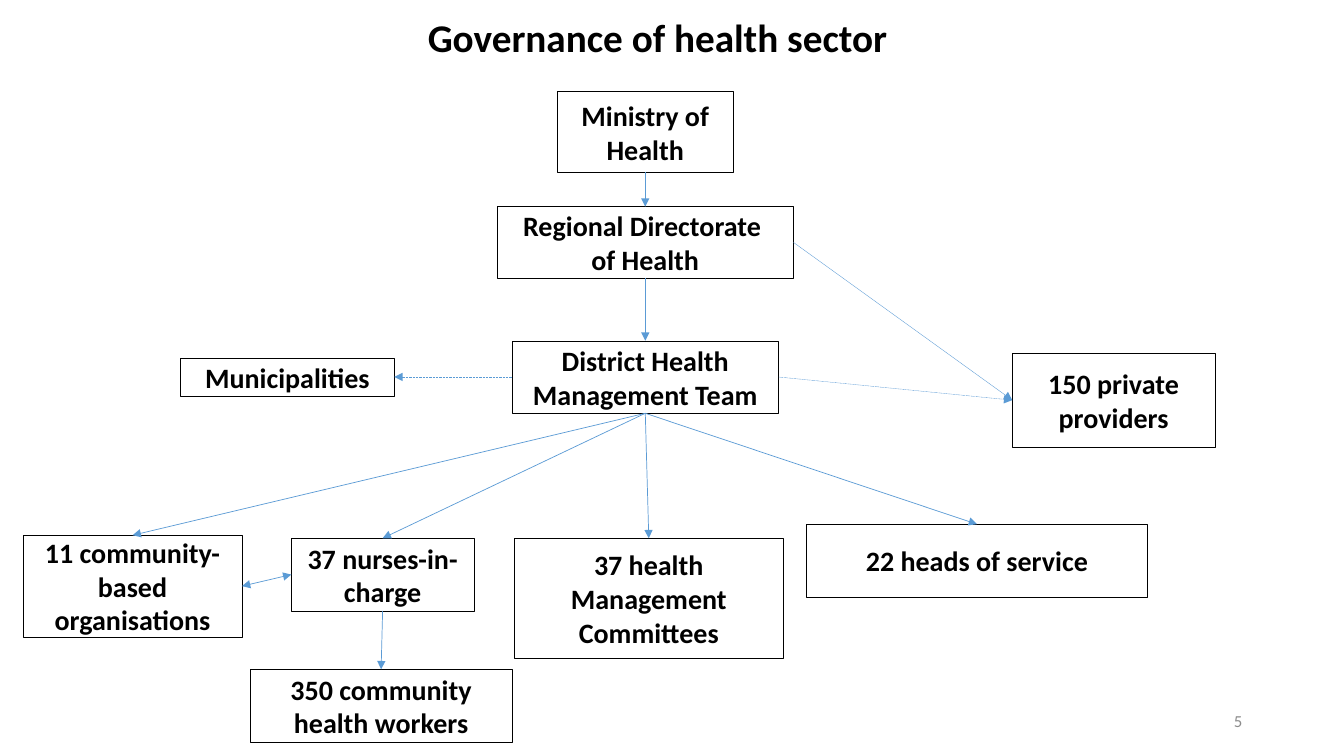
import pptx
import pptx.util
import pptx.dml.color
import pptx.enum.dml
import pptx.enum.shapes
import pptx.enum.text
import pptx.oxml.xmlchemy

Inches = pptx.util.Inches
Align = pptx.enum.text.PP_ALIGN
TOP, LEFT, BOTTOM, RIGHT = range(4)


def colour(value):
    return pptx.dml.color.RGBColor.from_string(value)


class Chart:
    """Draws the boxes, arrows and labels of an organisation chart on one page."""

    font = "Calibri"
    ink = "000000"
    paper = "FFFFFF"
    arrow_blue = "5B9BD5"
    muted = "8C8C8C"

    def __init__(self, page):
        self.page = page

    def set_text(self, shape, text, size, ink, bold=True, align=Align.CENTER, spacing=1.0):
        frame = shape.text_frame
        frame.word_wrap = True
        frame.vertical_anchor = pptx.enum.text.MSO_ANCHOR.MIDDLE
        para = frame.paragraphs[0]
        para.text = text
        para.alignment = align
        para.line_spacing = spacing
        para.font.name = self.font
        para.font.size = pptx.util.Pt(size)
        para.font.bold = bold
        para.font.color.rgb = colour(ink)

    def label(self, text, place, size, ink, **style):
        shape = self.page.shapes.add_textbox(*map(Inches, place))
        self.set_text(shape, text, size, ink, **style)

    def box(self, text, *place):
        shape = self.page.shapes.add_shape(
            pptx.enum.shapes.MSO_SHAPE.RECTANGLE, *map(Inches, place))
        shape.shadow.inherit = False
        shape.fill.solid()
        shape.fill.fore_color.rgb = colour(self.paper)
        shape.line.color.rgb = colour(self.ink)
        shape.line.width = pptx.util.Pt(0.25)
        self.set_text(shape, text, 20, self.ink)
        return shape

    def arrow(self, start, start_side, end, end_side, width=0.5, dotted=False, both=False):
        connector = self.page.shapes.add_connector(
            pptx.enum.shapes.MSO_CONNECTOR.STRAIGHT, 0, 0, 0, 0)
        connector.begin_connect(start, start_side)
        connector.end_connect(end, end_side)
        connector.line.color.rgb = colour(self.arrow_blue)
        connector.line.width = pptx.util.Pt(width)
        if dotted:
            connector.line.dash_style = pptx.enum.dml.MSO_LINE.ROUND_DOT
        outline = connector.get_or_add_ln()
        for tag in ["a:headEnd", "a:tailEnd"] if both else ["a:tailEnd"]:
            tip = pptx.oxml.xmlchemy.OxmlElement(tag)
            tip.set("type", "triangle")
            outline.append(tip)
        connector.element.spPr.append(pptx.oxml.xmlchemy.OxmlElement("a:effectLst"))


def main():
    deck = pptx.Presentation()
    deck.slide_width = Inches(13.33)
    deck.slide_height = Inches(7.5)
    chart = Chart(deck.slides.add_slide(deck.slide_layouts[6]))

    chart.label("Governance of health sector", (1.79, 0.18, 9.46, 0.42), 28,
                chart.ink, spacing=0.9)
    chart.label("5", (9.42, 6.95, 3, 0.4), 12, chart.muted, bold=False, align=Align.RIGHT)

    ministry = chart.box("Ministry of Health", 5.53, 0.91, 1.74, 0.8)
    region = chart.box("Regional Directorate \nof Health", 4.93, 2.05, 2.94, 0.71)
    district = chart.box("District Health Management Team", 5.08, 3.38, 2.64, 0.72)
    municipalities = chart.box("Municipalities", 1.79, 3.55, 2.12, 0.38)
    providers = chart.box("150 private providers", 10.04, 3.5, 2.01, 0.94)
    organisations = chart.box("11 community-based organisations", 0.23, 5.31, 2.17, 1.01)
    nurses = chart.box("37 nurses-in-charge", 2.89, 5.34, 1.81, 0.72)
    committees = chart.box("37 health Management Committees", 5.1, 5.34, 2.67, 1.19)
    heads = chart.box("22 heads of service", 8, 5.2, 3.38, 0.72)
    workers = chart.box("350 community health workers", 2.48, 6.64, 2.6, 0.72)

    for upper, lower in [(ministry, region), (region, district), (nurses, workers)]:
        chart.arrow(upper, BOTTOM, lower, TOP)
    for team in [organisations, nurses, committees, heads]:
        chart.arrow(district, BOTTOM, team, TOP)
    chart.arrow(region, RIGHT, providers, LEFT, width=0.25)
    chart.arrow(district, RIGHT, providers, LEFT, width=0.25, dotted=True)
    chart.arrow(district, LEFT, municipalities, RIGHT, dotted=True)
    chart.arrow(organisations, RIGHT, nurses, LEFT, both=True)

    deck.save("out.pptx")


if __name__ == "__main__":
    main()
